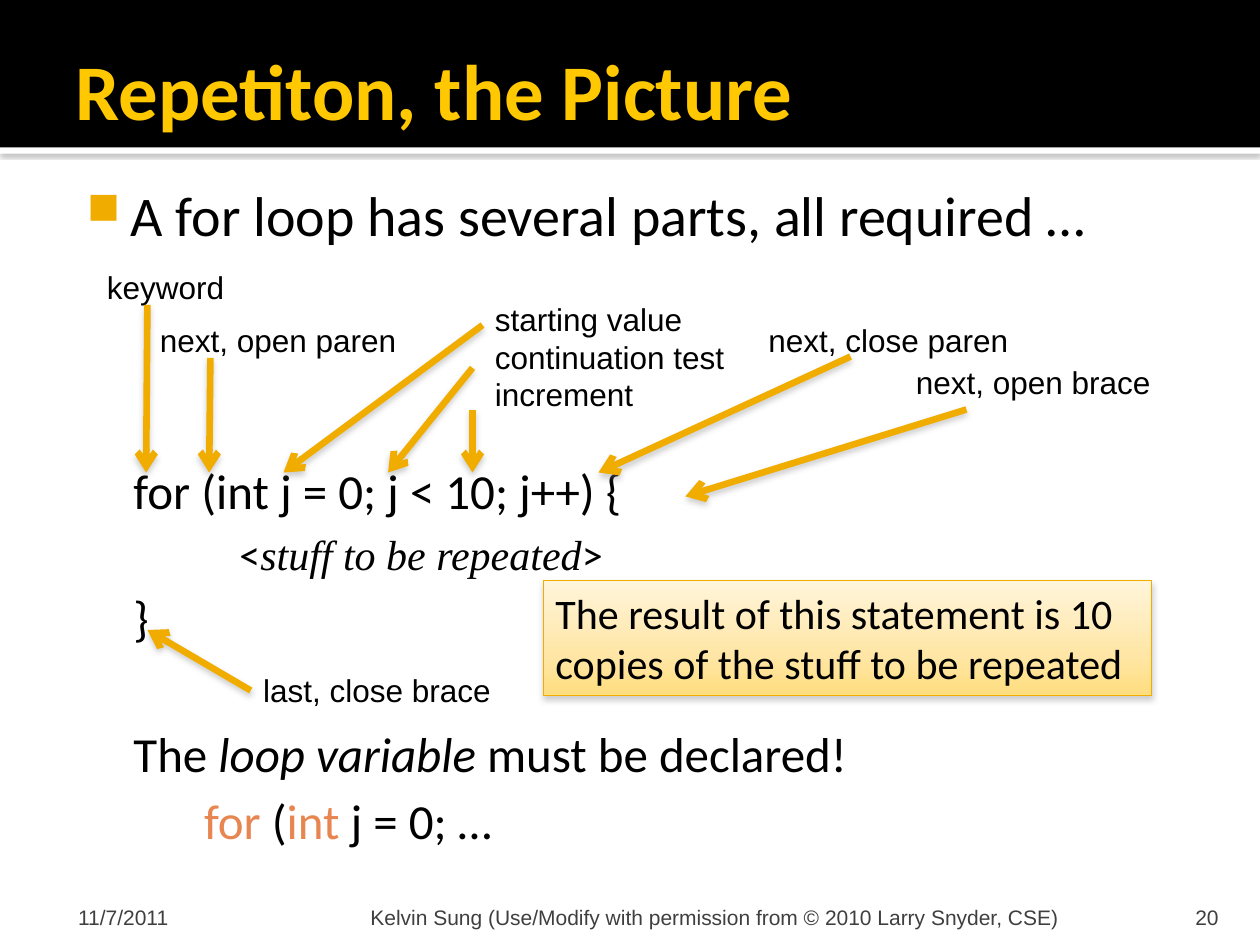
import lxml.etree
import pptx
import pptx.dml.color
import pptx.enum.dml
import pptx.enum.shapes
import pptx.enum.text
import pptx.oxml
import pptx.oxml.ns
import pptx.util

Inches, Pt = pptx.util.Inches, pptx.util.Pt
qn = pptx.oxml.ns.qn
ANCHOR = pptx.enum.text.MSO_ANCHOR
ALIGN = pptx.enum.text.PP_ALIGN

COLORS = {
    "black": "000000", "white": "FFFFFF", "title": "FFC800", "accent": "F0AD00",
    "code": "E88651", "footer": "3F3F3F", "shadow": "808080",
}
TITLE = "Repetiton, the Picture"

# Each line: left margin, hanging indent, space before (pt), size, runs.
# Each run: text, then what differs from black upright Calibri.
BODY = [
    (0.48, -0.35, 0, 32, [("A for loop has several parts, all required …", {})]),
    (0.5, 0, 122, 28, [("for (int j = 0; j < 10; j++) {", {})]),
    (1.34, 0, 5, 24, [("<", {}),
                      ("stuff to be repeated", {"font": "Times New Roman", "italic": True}),
                      (">", {})]),
    (0.5, 0, 5, 28, [("}", {})]),
    (0.5, 0, 44, 28, [("The ", {}), ("loop variable", {"italic": True}),
                      (" must be declared!", {})]),
    (1.06, 0, 5, 28, [("for ", {"color": "code"}), ("(", {}),
                      ("int ", {"color": "code"}), ("j = 0; …", {})]),
]
LABELS = [
    ("keyword", (0.75, 2.08, 1.14, 0.4)),
    ("next, open paren", (1.17, 2.5, 2.1, 0.4)),
    ("starting value\ncontinuation test\nincrement", (3.83, 2.33, 2.04, 1.01)),
    ("next, close paren", (6, 2.5, 2.12, 0.4)),
    ("next, open brace", (7.17, 2.83, 2.08, 0.4)),
    ("last, close brace", (1.99, 5.28, 2.03, 0.4)),
]
ARROWS = [
    ((1.17, 2.42), (1.16, 3.75)),
    ((1.67, 2.84), (1.66, 3.75)),
    ((3.83, 2.58), (2.25, 3.75)),
    ((3.75, 2.92), (3.08, 3.75)),
    ((3.75, 3.25), (3.75, 3.75)),
    ((6.75, 2.83), (4.75, 3.75)),
    ((7.67, 3.25), (5.44, 3.94)),
    ((1.99, 5.48), (1.17, 5)),
]
RESULT = "The result of this statement is 10 copies of the stuff to be repeated"
RESULT_GRADIENT = [(0, "FFF5DA"), (65, "FFE6A6"), (100, "FFDE7F")]
FOOTERS = [
    ("11/7/2011", (0.5, 7.08, 2.33, 0.3), (0.12, 0.05, 0.05, 0), ALIGN.LEFT),
    ("Kelvin Sung (Use/Modify with permission from © 2010 Larry Snyder, CSE)",
     (2.89, 7.08, 6.02, 0.3), (0.05, 0.05, 0.05, 0), ALIGN.LEFT),
    ("20", (8.97, 7.08, 0.8, 0.3), (0.1, 0.05, 0.1, 0), ALIGN.RIGHT),
]


def rgb(name):
    return pptx.dml.color.RGBColor.from_string(COLORS[name])


def inches(values):
    return [Inches(value) for value in values]


def add_child(parent, tag, **attributes):
    child = lxml.etree.SubElement(parent, qn(tag))
    for name, value in attributes.items():
        child.set(name, str(value))
    return child


def set_shadow(shape, alpha=38, blur=3.5, distance=2):
    """Give the shape a grey shadow that falls straight down; call after fill and line."""
    properties = shape._element.spPr
    for old in properties.findall(qn("a:effectLst")):
        properties.remove(old)
    effects = add_child(properties, "a:effectLst")
    shadow = add_child(effects, "a:outerShdw", blurRad=Pt(blur), dist=Pt(distance),
                       dir=5400000, algn="ctr", rotWithShape=0)
    color = add_child(shadow, "a:srgbClr", val=COLORS["shadow"])
    add_child(color, "a:alpha", val=alpha * 1000)


def format_run(run, size, font="Calibri", color="black", italic=False, bold=False):
    run.font.size = Pt(size)
    run.font.name = font
    run.font.color.rgb = rgb(color)
    run.font.italic = italic
    run.font.bold = bold


def set_text(shape, text, size, align=ALIGN.LEFT, **style):
    shape.text_frame.text = text
    for paragraph in shape.text_frame.paragraphs:
        paragraph.alignment = align
        for run in paragraph.runs:
            format_run(run, size, **style)


def set_frame(shape, insets, anchor=ANCHOR.TOP):
    frame = shape.text_frame
    frame.margin_left, frame.margin_top, frame.margin_right, frame.margin_bottom = inches(insets)
    frame.vertical_anchor = anchor
    frame.word_wrap = True


def add_rectangle(slide, box):
    shape = slide.shapes.add_shape(pptx.enum.shapes.MSO_SHAPE.RECTANGLE, *inches(box))
    shape.shadow.inherit = False
    return shape


def add_band(slide, box, color):
    band = add_rectangle(slide, box)
    band.fill.solid()
    band.fill.fore_color.rgb = rgb(color)
    band.line.fill.background()
    return band


def add_title(slide):
    title = slide.shapes.title
    title.left, title.top, title.width, title.height = inches((0.5, 0.17, 9, 1.08))
    set_frame(title, (0.1, 0.05, 0.05, 0.05), ANCHOR.MIDDLE)
    set_text(title, TITLE, 45, color="title", bold=True)
    slide.shapes._spTree.append(title._element)  # in front of the black band


def add_body(slide):
    body = slide.shapes.add_textbox(*inches((0.5, 1.33, 9, 5.67)))
    set_frame(body, (0.06, 0.1, 0.1, 0.05))
    frame = body.text_frame
    for index, (margin, indent, space, size, runs) in enumerate(BODY):
        paragraph = frame.add_paragraph() if index else frame.paragraphs[0]
        paragraph.space_before = Pt(space)
        properties = paragraph._p.get_or_add_pPr()
        properties.set("marL", str(Inches(margin)))
        properties.set("indent", str(Inches(indent)))
        if indent:
            color = add_child(properties, "a:buClr")
            add_child(color, "a:srgbClr", val=COLORS["accent"])
            add_child(properties, "a:buSzPct", val=80000)
            add_child(properties, "a:buChar", char="■")
        for text, style in runs:
            run = paragraph.add_run()
            run.text = text
            format_run(run, size, **style)


def add_arrow(slide, start, end):
    arrow = slide.shapes.add_connector(
        pptx.enum.shapes.MSO_CONNECTOR.STRAIGHT, *inches(start + end))
    arrow.line.color.rgb = rgb("accent")
    arrow.line.width = Pt(3.78)
    add_child(arrow.line._get_or_add_ln(), "a:tailEnd", type="arrow")
    set_shadow(arrow)


def add_result(slide):
    result = add_rectangle(slide, (4.31, 4.61, 4.83, 0.91))
    result.fill.gradient()
    result.fill.gradient_angle = 270
    stops = result._element.spPr.find(qn("a:gradFill")).find(qn("a:gsLst"))
    stops.clear()
    for position, color in RESULT_GRADIENT:
        stop = add_child(stops, "a:gs", pos=position * 1000)
        add_child(stop, "a:srgbClr", val=color)
    result.line.color.rgb = rgb("accent")
    result.line.width = Pt(0.5)
    set_shadow(result)
    set_frame(result, (0.1, 0.05, 0.1, 0.05))
    set_text(result, RESULT, 24)


def main():
    presentation = pptx.Presentation()
    presentation.slide_width, presentation.slide_height = inches((10, 7.5))
    slide = presentation.slides.add_slide(presentation.slide_layouts[5])

    strip = add_band(slide, (0, 1.17, 10, 0.05), "white")
    set_shadow(strip, alpha=60, blur=2.5, distance=0.8)
    add_band(slide, (0, 0, 10, 1.17), "black")
    add_title(slide)
    add_body(slide)
    for text, box, insets, align in FOOTERS:
        footer = slide.shapes.add_textbox(*inches(box))
        set_frame(footer, insets, ANCHOR.BOTTOM)
        set_text(footer, text, 12, align, font="Arial", color="footer")
    for text, box in LABELS:
        label = slide.shapes.add_textbox(*inches(box))
        label.text_frame.word_wrap = False
        set_text(label, text, 18, font="Arial")
    for start, end in ARROWS:
        add_arrow(slide, start, end)
    add_result(slide)
    presentation.save("out.pptx")


if __name__ == "__main__":
    main()
